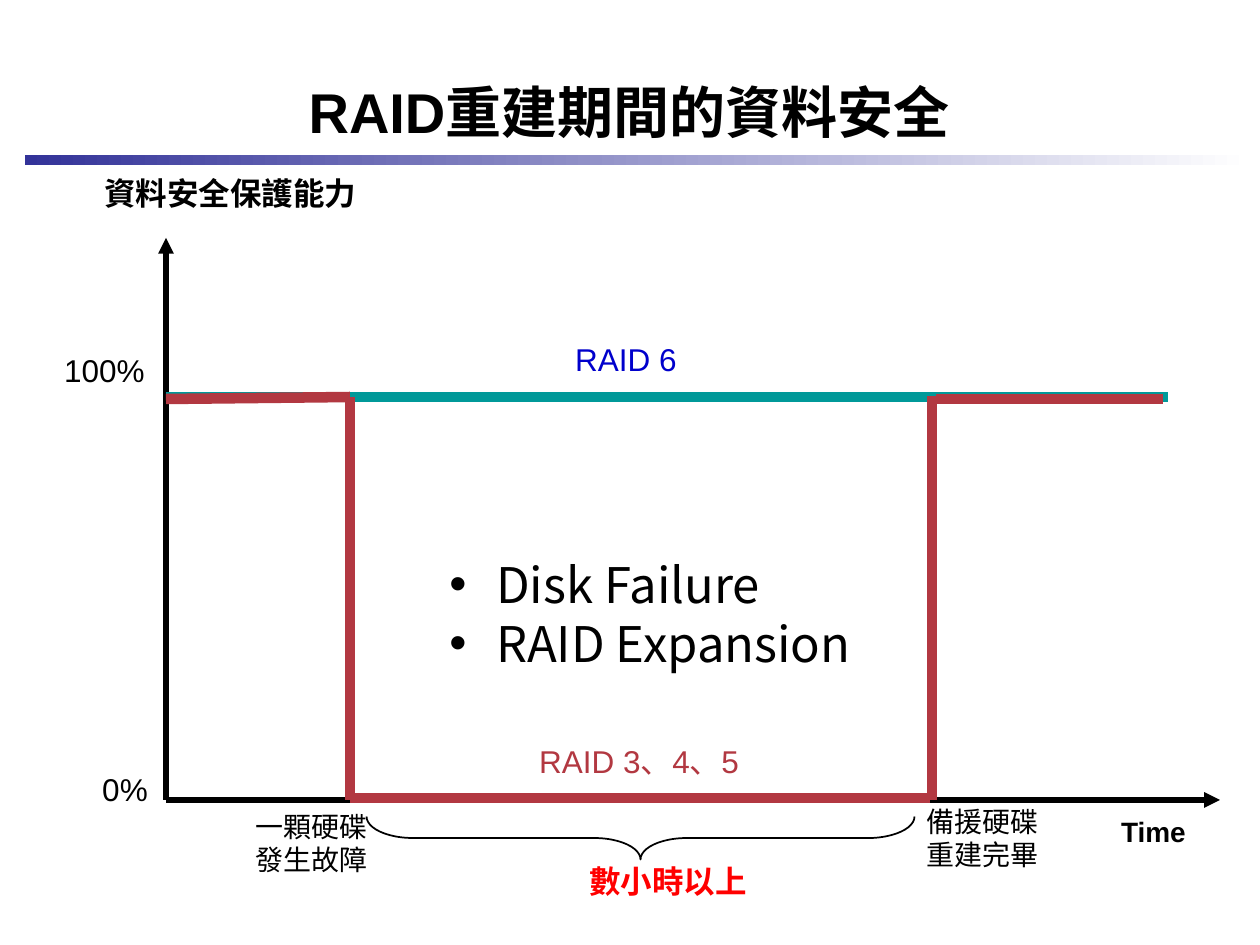
from lxml import etree
from pptx import Presentation
from pptx import util as u
from pptx.dml.color import RGBColor
from pptx.enum import shapes, text
from pptx.oxml import ns

EMU_PER_PX = 914400 / 126
BLACK = RGBColor(0x00, 0x00, 0x00)
WHITE = RGBColor(0xFF, 0xFF, 0xFF)
NAVY = RGBColor(0x33, 0x33, 0x99)
BLUE = RGBColor(0x00, 0x00, 0xCC)
TEAL = RGBColor(0x00, 0x99, 0x99)
BRICK = RGBColor(0xB2, 0x38, 0x41)
RED = RGBColor(0xFF, 0x00, 0x00)
LABEL_FONT = "Arial"
BODY_FONT = "Noto Sans CJK SC"


def px(value):
    return u.Emu(round(value * EMU_PER_PX))


class SlideBuilder:
    def __init__(self, slide):
        self.slide = slide

    def rule(self, *box):
        shape = self.slide.shapes.add_shape(shapes.MSO_SHAPE.RECTANGLE, *map(px, box))
        shape.shadow.inherit = False
        shape.line.fill.background()
        shape.fill.gradient()
        shape.fill.gradient_angle = 0
        for stop, color in zip(shape.fill.gradient_stops, (NAVY, WHITE)):
            stop.color.rgb = color

    def line(self, start, end, color, width, arrow=False):
        connector = self.slide.shapes.add_connector(
            shapes.MSO_CONNECTOR.STRAIGHT, *map(px, start + end))
        connector.line.color.rgb = color
        connector.line.width = u.Pt(width)
        if arrow:
            outline = connector.line._get_or_add_ln()
            etree.SubElement(outline, ns.qn("a:tailEnd"), type="triangle")
        etree.SubElement(connector._element.spPr, ns.qn("a:effectLst"))

    def brace(self, *box):
        shape = self.slide.shapes.add_shape(shapes.MSO_SHAPE.RIGHT_BRACE, *map(px, box))
        shape.shadow.inherit = False
        shape.rotation = 90
        shape.adjustments[0] = 1.08
        shape.fill.background()
        shape.line.color.rgb = BLACK
        shape.line.width = u.Pt(1)

    def frame(self, box):
        text_frame = self.slide.shapes.add_textbox(*map(px, box)).text_frame
        text_frame.word_wrap = True
        return text_frame

    def run(self, paragraph, words, size, color, bold=False, font=LABEL_FONT):
        run = paragraph.add_run()
        run.text = words
        run.font.name = font
        run.font.size = u.Pt(size)
        run.font.bold = bold
        run.font.color.rgb = color

    def label(self, box, words, size=18, color=BLACK, bold=False,
              anchor=text.MSO_ANCHOR.TOP):
        text_frame = self.frame(box)
        text_frame.vertical_anchor = anchor
        paragraph = text_frame.paragraphs[0]
        paragraph.alignment = text.PP_ALIGN.CENTER
        self.run(paragraph, words, size, color, bold)

    def bullets(self, box, items):
        text_frame = self.frame(box)
        for index, item in enumerate(items):
            paragraph = text_frame.add_paragraph() if index else text_frame.paragraphs[0]
            properties = paragraph._p.get_or_add_pPr()
            properties.set("marL", str(px(47)))
            properties.set("indent", str(px(-47)))
            etree.SubElement(properties, ns.qn("a:buFont"), typeface=LABEL_FONT)
            etree.SubElement(properties, ns.qn("a:buChar"), char="•")
            paragraph.line_spacing = 0.87
            if index:
                paragraph.space_before = u.Pt(4.5)
            self.run(paragraph, item, 28, BLACK, font=BODY_FONT)


def main():
    presentation = Presentation()
    presentation.slide_width = px(1260)
    presentation.slide_height = px(945)
    slide = presentation.slides.add_slide(presentation.slide_layouts[6])
    builder = SlideBuilder(slide)

    builder.rule(25, 155, 1226, 10)
    builder.label((94, 66, 1071, 91), "RAID重建期間的資料安全", 32, bold=True,
                  anchor=text.MSO_ANCHOR.MIDDLE)

    origin = (166, 800)
    builder.line(origin, (166, 238), BLACK, 3, arrow=True)
    builder.line(origin, (1220, 800), BLACK, 3, arrow=True)
    builder.line((166, 397), (1168, 397), TEAL, 6)
    for start, end in (
        ((166, 399), (350, 397)),
        ((350, 397), (350, 800)),
        ((350, 798), (930, 798)),
        ((932, 800), (932, 396)),
        ((936, 399), (1163, 399)),
    ):
        builder.line(start, end, BRICK, 6)

    builder.label((524, 334, 204, 63), "RAID 6", color=BLUE)
    builder.label((476, 736, 326, 63), "RAID 3、4、5", color=BRICK)
    builder.label((1056, 808, 195, 47), "Time", 16, bold=True)
    builder.label((44, 168, 372, 63), "資料安全保護能力", bold=True)
    builder.label((70, 764, 110, 63), "0%")
    builder.label((34, 345, 141, 63), "100%")
    builder.brace(619, 564, 43, 548)
    builder.label((537, 856, 262, 63), "數小時以上", color=RED, bold=True)
    builder.label((234, 803, 155, 81), "一顆硬碟發生故障", 16)
    builder.label((905, 798, 155, 81), "備援硬碟重建完畢", 16)
    builder.bullets((437, 556, 440, 131), ("Disk Failure", "RAID Expansion"))

    presentation.save("out.pptx")


if __name__ == "__main__":
    main()
